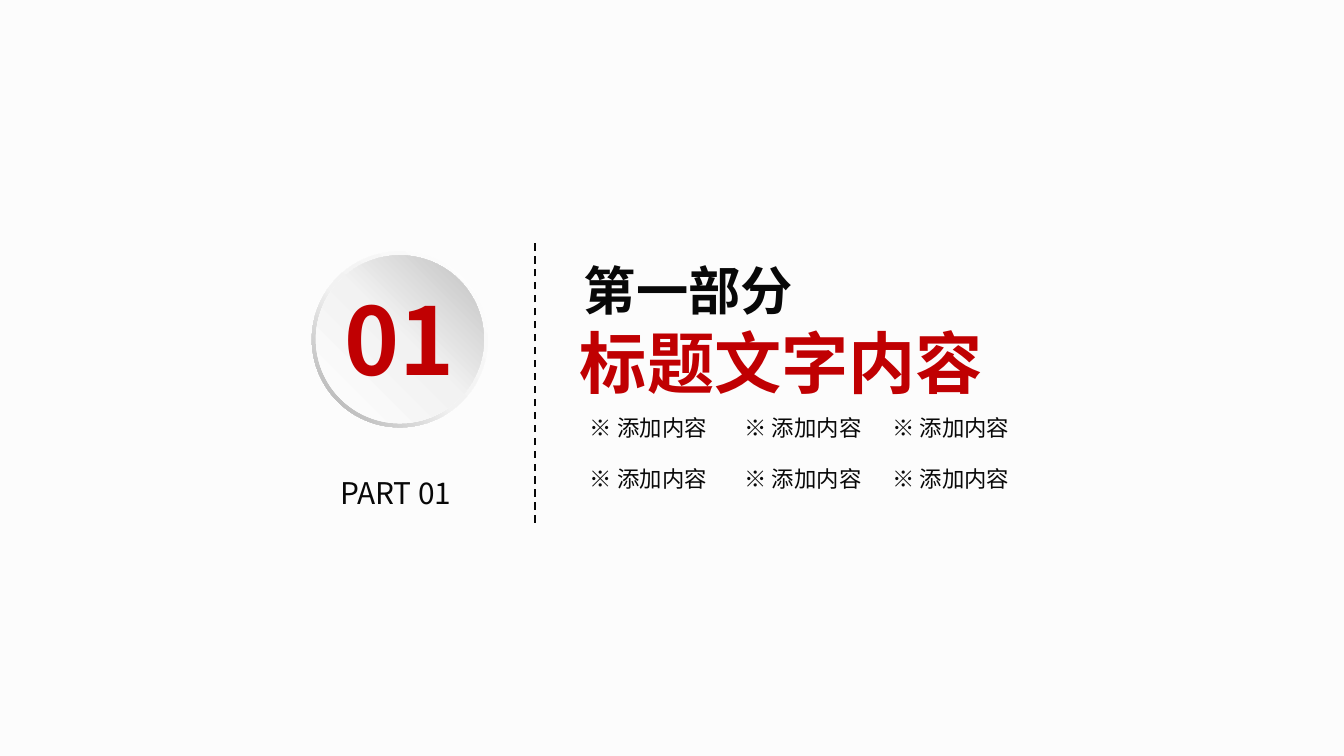
from lxml.etree import SubElement
from pptx import Presentation
from pptx.dml.color import RGBColor
from pptx.enum.dml import MSO_LINE
from pptx.enum.shapes import MSO_CONNECTOR, MSO_SHAPE
from pptx.enum.text import MSO_ANCHOR, MSO_AUTO_SIZE, PP_ALIGN
from pptx.oxml import parse_xml
from pptx.oxml.ns import nsdecls, qn
from pptx.util import Inches, Pt

FONT = "Noto Sans CJK SC"
INK, RED, PAPER = "080808", "C00002", "FCFCFC"


def color(code):
    return RGBColor.from_string(code)


def style(run, size, code, bold=False):
    font = run.font
    font.name, font.size, font.bold = FONT, Pt(size), bold
    font.color.rgb = color(code)
    SubElement(run._r.get_or_add_rPr(), qn("a:ea")).set("typeface", FONT)


def set_box(shape, box):
    shape.left, shape.top, shape.width, shape.height = map(Inches, box)


def add_label(shapes, box, text, size, code=INK, bold=False, pad=(0, 0)):
    label = shapes.add_textbox(*map(Inches, box))
    frame = label.text_frame
    frame.word_wrap = True
    frame.auto_size = MSO_AUTO_SIZE.SHAPE_TO_FIT_TEXT
    frame.margin_left = frame.margin_right = Inches(pad[0])
    frame.margin_top = frame.margin_bottom = Inches(pad[1])
    frame.text = text
    style(frame.paragraphs[0].runs[0], size, code, bold)


def add_disc(shapes, kind, box, stops, angle):
    disc = shapes.add_shape(kind, *map(Inches, box))
    disc.shadow.inherit = False
    disc.line.fill.background()
    marks = "".join(
        f'<a:gs pos="{pos * 1000}"><a:srgbClr val="{code}"/></a:gs>'
        for pos, code in stops)
    disc._element.spPr.insert(2, parse_xml(
        f'<a:gradFill {nsdecls("a")} rotWithShape="1"><a:gsLst>{marks}</a:gsLst>'
        f'<a:lin ang="{angle * 60000}" scaled="0"/></a:gradFill>'))
    return disc


def add_rule(shapes, x, start, end):
    rule = shapes.add_connector(
        MSO_CONNECTOR.STRAIGHT, Inches(x), Inches(start), Inches(x), Inches(end))
    rule.line.color.rgb = color(INK)
    rule.line.width = Pt(1)
    rule.line.dash_style = MSO_LINE.DASH
    SubElement(rule._element.spPr, qn("a:effectLst"))


def set_title(title):
    set_box(title, (4.2, 1.87, 3.23, 1.18))
    frame = title.text_frame
    frame.word_wrap = False
    frame.auto_size = MSO_AUTO_SIZE.SHAPE_TO_FIT_TEXT
    frame.vertical_anchor = MSO_ANCHOR.TOP
    part, name = frame.paragraphs[0], frame.add_paragraph()
    part.alignment, name.alignment = PP_ALIGN.LEFT, PP_ALIGN.CENTER
    # The small first run sets the indent of the upper line
    for line, text, size, code in (
            (part, " ", 14, INK),
            (part, "第一部分", 28, INK),
            (name, "标题文字内容", 36, RED)):
        run = line.add_run()
        run.text = text
        style(run, size, code, True)


def add_badge(shapes):
    group = shapes.add_group_shape().shapes
    rim = add_disc(group, MSO_SHAPE.DONUT, (2.32, 1.87, 1.31, 1.31),
                   [(0, "FFFFFF"), (55, "F2F2F2"), (100, "A6A6A6")], 135)
    rim.adjustments[0] = 0.05
    add_disc(group, MSO_SHAPE.OVAL, (2.35, 1.9, 1.25, 1.25),
             [(0, "FFFFFF"), (51, "F2F2F2"), (100, "BFBFBF")], 315)
    add_label(group, (2.56, 2.1, 0.99, 0.84), "01", 50, RED, True)


def main():
    deck = Presentation()
    deck.slide_width = Inches(10)
    deck.slide_height = deck.slide_width * 9 // 16
    slide = deck.slides.add_slide(deck.slide_layouts[5])
    slide.background.fill.solid()
    slide.background.fill.fore_color.rgb = color(PAPER)
    shapes = slide.shapes

    # Section heading and divider
    set_title(shapes.title)
    add_rule(shapes, 3.98, 3.89, 1.79)

    # Section number
    add_label(shapes, (2.53, 3.53, 0.99, 0.27), "PART 01", 16)
    add_badge(shapes)

    # Topics in two rows of three
    for y in (3.05, 3.43):
        for x in (4.32, 5.47, 6.57):
            add_label(shapes, (x, y, 1.1, 0.27), "※ 添加内容", 12, pad=(0.07, 0.03))

    deck.save("out.pptx")


if __name__ == "__main__":
    main()
